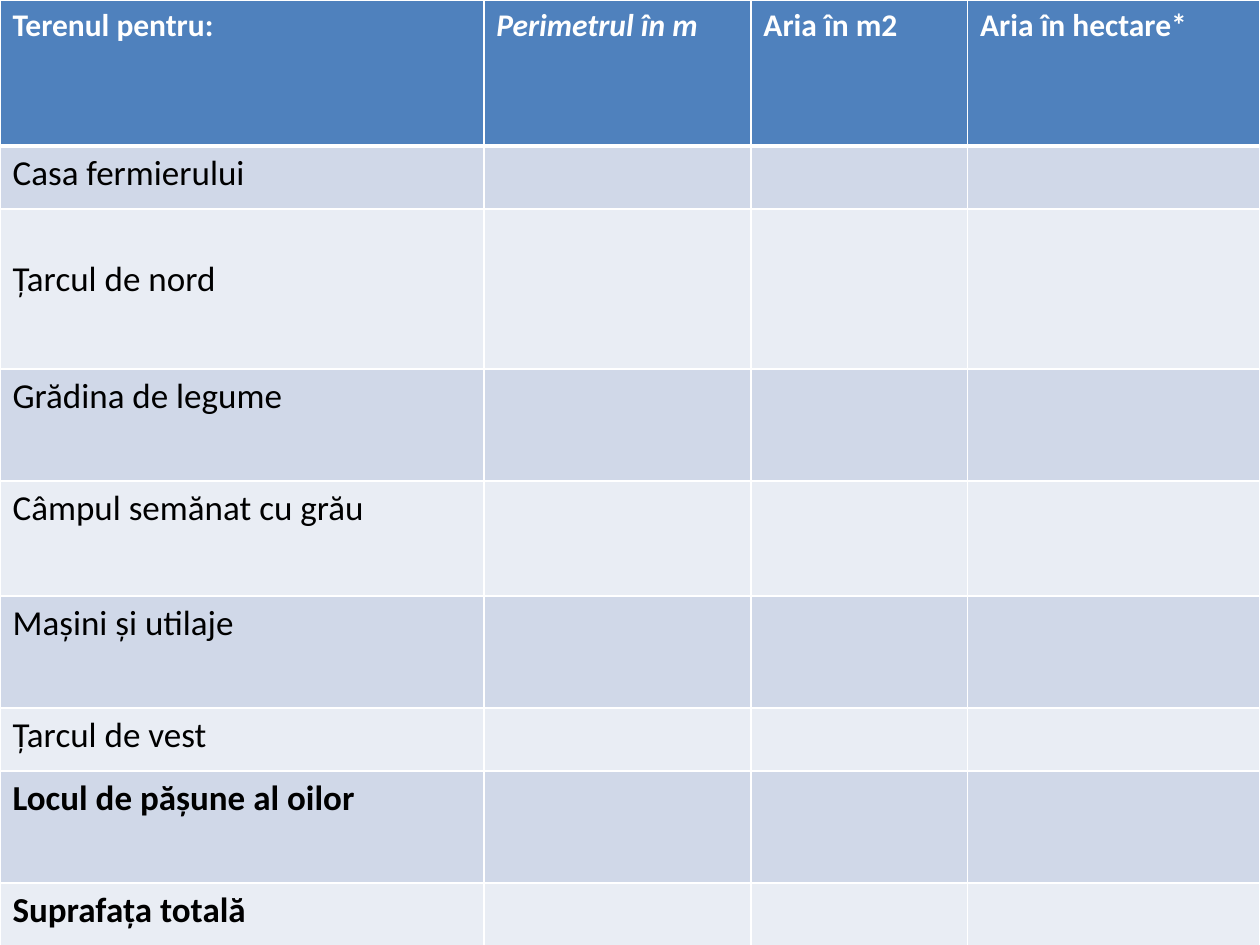
import lxml.etree
import pptx
import pptx.dml.color
import pptx.oxml.ns
import pptx.util

Inches = pptx.util.Inches
Pt = pptx.util.Pt
RGBColor = pptx.dml.color.RGBColor

WHITE = RGBColor(0xFF, 0xFF, 0xFF)
BLACK = RGBColor(0x00, 0x00, 0x00)
HEADER_BLUE = RGBColor(0x4F, 0x81, 0xBD)
BANDS = (RGBColor(0xD0, 0xD8, 0xE8), RGBColor(0xE9, 0xED, 0xF4))

HEADERS = ["Terenul pentru:", "Perimetrul în m", "Aria în m2", "Aria în hectare*"]
ITALIC_HEADER = "Perimetrul în m"
LANDS = [
    "Casa fermierului",
    "Țarcul de nord",
    "Grădina de legume",
    "Câmpul semănat cu grău",
    "Mașini și utilaje",
    "Țarcul de vest",
    "Locul de pășune al oilor",
    "Suprafața totală",
]
BOLD_LANDS = LANDS[-2:]
LOWERED_LAND = "Țarcul de nord"
COLUMN_WIDTHS = [3.84, 2.12, 1.72, 2.32]
ROW_HEIGHTS = [1.16, 0.5, 1.27, 0.89, 0.91, 0.89, 0.5, 0.89, 0.5]


def set_borders(cell, top, bottom):
    """Draw white borders; top and bottom are widths in points."""
    properties = cell._tc.get_or_add_tcPr()
    qn = pptx.oxml.ns.qn
    for side, width in (("L", 1), ("R", 1), ("T", top), ("B", bottom)):
        line = lxml.etree.SubElement(properties, qn(f"a:ln{side}"), w=str(Pt(width)))
        fill = lxml.etree.SubElement(line, qn("a:solidFill"))
        lxml.etree.SubElement(fill, qn("a:srgbClr"), val=str(WHITE))


def fill_cell(cell, color):
    cell.fill.solid()
    cell.fill.fore_color.rgb = color


def write_cell(cell, text, size, color, bold=False, italic=False):
    run = cell.text_frame.paragraphs[0].add_run()
    run.text = text
    run.font.name = "Calibri"
    run.font.size = Pt(size)
    run.font.color.rgb = color
    run.font.bold = bold
    run.font.italic = italic


def add_land_table(slide):
    table = slide.shapes.add_table(
        len(ROW_HEIGHTS), len(COLUMN_WIDTHS), 0, 0, Inches(10), Inches(7.5)
    ).table
    for column, width in zip(table.columns, COLUMN_WIDTHS):
        column.width = Inches(width)
    for row, height in zip(table.rows, ROW_HEIGHTS):
        row.height = Inches(height)

    for index, row in enumerate(table.rows):
        for cell in row.cells:
            set_borders(cell, 3 if index == 1 else 1, 3 if index == 0 else 1)
            fill_cell(cell, BANDS[(index - 1) % 2] if index else HEADER_BLUE)

    for column, header in enumerate(HEADERS):
        write_cell(table.cell(0, column), header, 18, WHITE,
                   bold=True, italic=header == ITALIC_HEADER)
    for index, land in enumerate(LANDS, start=1):
        cell = table.cell(index, 0)
        write_cell(cell, land, 20, BLACK, bold=land in BOLD_LANDS)
        if land == LOWERED_LAND:
            cell.margin_top = Inches(0.39)


def main():
    presentation = pptx.Presentation()
    presentation.slide_width = Inches(10)
    presentation.slide_height = Inches(7.5)
    slide = presentation.slides.add_slide(presentation.slide_layouts[6])
    add_land_table(slide)
    presentation.save("out.pptx")


if __name__ == "__main__":
    main()
